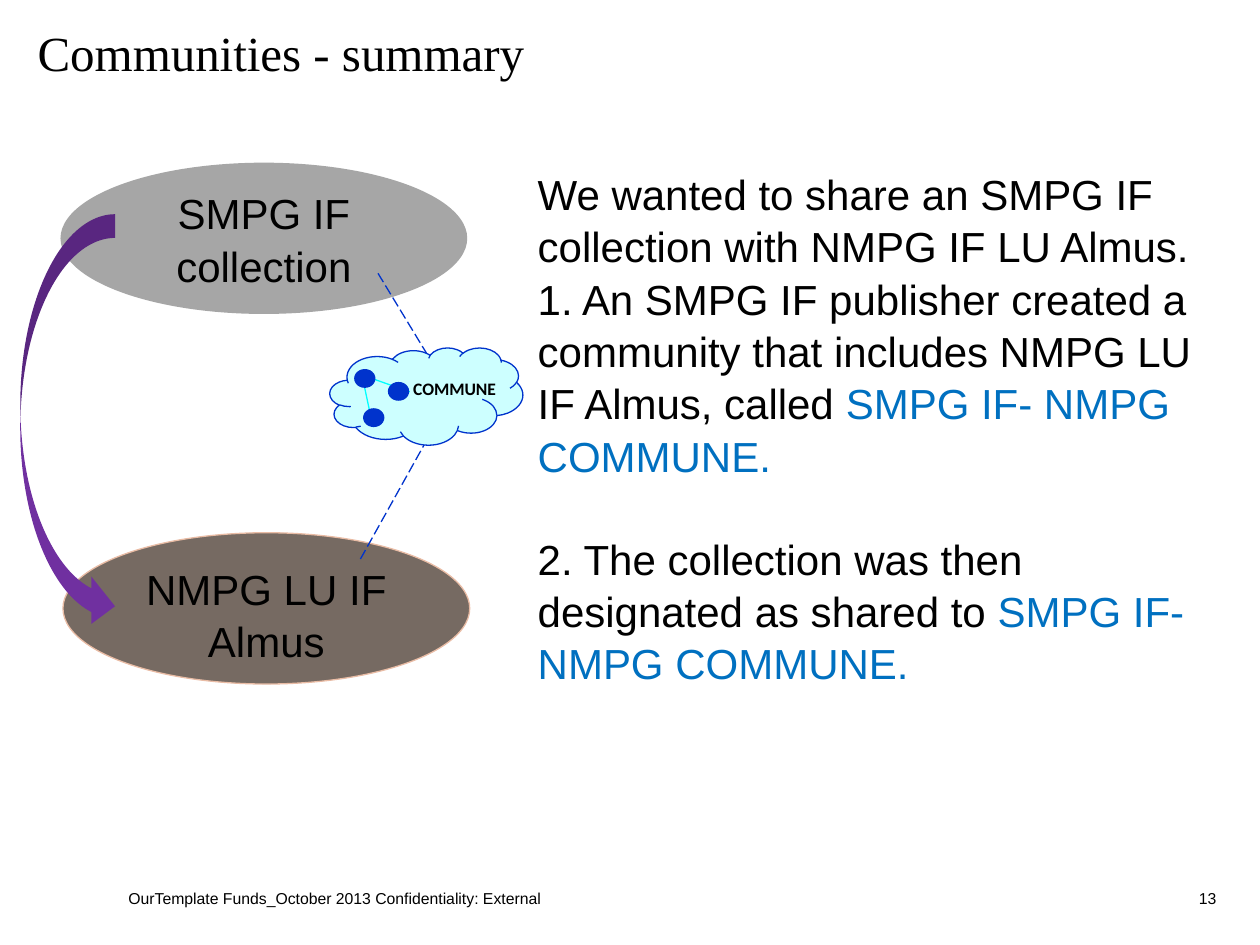
from lxml import etree
from pptx import Presentation
from pptx.dml.color import RGBColor
from pptx.enum.dml import MSO_LINE
from pptx.enum.shapes import MSO_CONNECTOR, MSO_SHAPE
from pptx.enum.text import MSO_ANCHOR, PP_ALIGN
from pptx.oxml.ns import qn
from pptx.util import Cm, Pt

LEFT, CENTER, RIGHT = PP_ALIGN.LEFT, PP_ALIGN.CENTER, PP_ALIGN.RIGHT
TOP, MIDDLE = MSO_ANCHOR.TOP, MSO_ANCHOR.MIDDLE
OVAL, CLOUD = MSO_SHAPE.OVAL, MSO_SHAPE.CLOUD
CURVED_ARROW = MSO_SHAPE.CURVED_RIGHT_ARROW
STRAIGHT, LONG_DASH = MSO_CONNECTOR.STRAIGHT, MSO_LINE.LONG_DASH
BLACK, BLUE, NAVY, CYAN = "000000", "0070C0", "0033CC", "00FFFF"
BODY_SIZE, BODY_SPACING = 24, 1.04


def color(value):
    return RGBColor.from_string(value)


def add_run(p, text, size, font="Arial", text_color=BLACK, bold=False):
    r = p.add_run()
    r.text = text
    r.font.size = Pt(size)
    r.font.name = font
    r.font.bold = bold
    r.font.color.rgb = color(text_color)


def add_text(shapes, box, text, size, font="Arial", align=LEFT, anchor=MIDDLE,
             wrap=True, bold=False):
    tf = shapes.add_textbox(*map(Cm, box)).text_frame
    tf.word_wrap = wrap
    tf.vertical_anchor = anchor
    p = tf.paragraphs[0]
    p.alignment = align
    add_run(p, text, size, font, bold=bold)
    return tf


def add_shape(shapes, kind, box, fill, line=None):
    sp = shapes.add_shape(kind, *map(Cm, box))
    sp.shadow.inherit = False
    sp.fill.solid()
    sp.fill.fore_color.rgb = color(fill)
    if line:
        sp.line.color.rgb = color(line)
        sp.line.width = Pt(0.75)
    else:
        sp.line.fill.background()
    return sp


def add_party(shapes, box, text, fill, anchor, line=None):
    tf = add_shape(shapes, OVAL, box, fill, line).text_frame
    tf.word_wrap = True
    tf.vertical_anchor = anchor
    p = tf.paragraphs[0]
    p.alignment = CENTER
    p.line_spacing = BODY_SPACING
    add_run(p, text, BODY_SIZE)


def add_line(shapes, ends, line, dash=None):
    cxn = shapes.add_connector(STRAIGHT, *map(Cm, ends))
    cxn.line.color.rgb = color(line)
    cxn.line.width = Pt(0.75)
    if dash:
        cxn.line.dash_style = dash
    etree.SubElement(cxn.line._get_or_add_ln().getparent(), qn("a:effectLst"))


def add_story(shapes, box, steps, community):
    tf = shapes.add_textbox(*map(Cm, box)).text_frame
    tf.word_wrap = True
    for i, step in enumerate(steps):
        p = tf.add_paragraph() if i else tf.paragraphs[0]
        p.line_spacing = BODY_SPACING
        if i:
            p.space_before = Pt(28.8)
        add_run(p, step, BODY_SIZE)
        add_run(p, community, BODY_SIZE, text_color=BLUE)


def add_community(shapes):
    group = shapes.add_group_shape().shapes
    for ends in ((7.62, 5.51, 8.61, 7.14), (8.76, 8.59, 7.26, 11.28)):
        add_line(group, ends, NAVY, LONG_DASH)
    add_shape(group, CLOUD, (6.65, 7.01, 3.89, 1.96), "CDFFFF", NAVY)
    add_text(group, (8.08, 7.49, 2.21, 0.69), "COMMUNE", 10, "Calibri",
             anchor=TOP, wrap=False, bold=True)
    for ends in ((7.32, 7.67, 7.52, 8.61), (7.19, 7.52, 8.26, 7.9)):
        add_line(group, ends, CYAN)
    for left, top in ((7.82, 7.7), (7.32, 8.23), (7.14, 7.44)):
        add_shape(group, OVAL, (left, top, 0.43, 0.38), NAVY)


def main():
    prs = Presentation()
    prs.slide_width, prs.slide_height = Cm(25.4), Cm(19.05)
    s = prs.slides.add_slide(prs.slide_layouts[6])
    shapes = s.shapes

    title = add_text(shapes, (0.51, 0.15, 24.56, 1.68), "Communities - summary",
                     28, "Times New Roman", wrap=False)
    title.margin_bottom = 0
    add_text(shapes, (2.34, 17.78, 15.77, 0.64),
             "OurTemplate Funds_October 2013 Confidentiality: External", 9)
    add_text(shapes, (22.66, 17.78, 2.11, 0.64), "13", 9, align=RIGHT)

    add_party(shapes, (1.22, 3.28, 8.2, 3.05), "SMPG IF collection",
              "A6A6A6", MIDDLE)
    add_story(shapes, (10.59, 3.23, 14.43, 10.52), (
        "We wanted to share an SMPG IF collection with NMPG IF LU Almus. "
        "1. An SMPG IF publisher created a community that includes "
        "NMPG LU IF Almus, called ",
        "2. The collection was then designated as shared to ",
    ), "SMPG IF- NMPG COMMUNE.")
    add_party(shapes, (1.27, 10.74, 8.2, 3.05), "NMPG LU IF Almus",
              "766A62", TOP, "E9BCA5")
    add_shape(shapes, CURVED_ARROW, (0.41, 4.32, 1.91, 8.38), "7030A0")
    add_community(shapes)

    prs.save("out.pptx")


if __name__ == "__main__":
    main()
